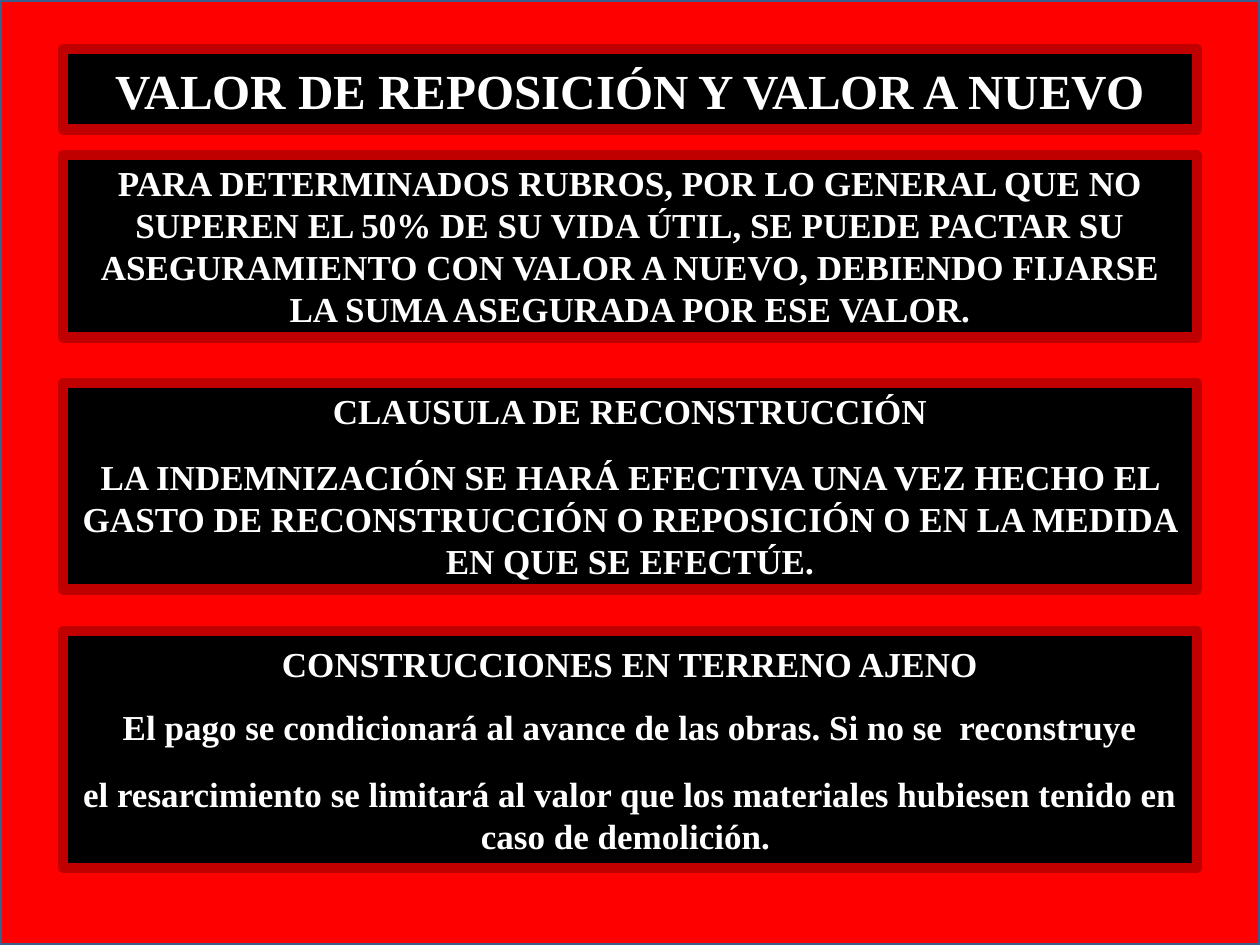
from dataclasses import dataclass

from pptx import Presentation
from pptx import util as u
from pptx.dml.color import RGBColor
from pptx.enum import shapes, text


@dataclass(frozen=True)
class Theme:
    """Colours, font and sizes shared by the whole slide."""
    backdrop: RGBColor = RGBColor(0xFF, 0x00, 0x00)
    edge: RGBColor = RGBColor(0x3A, 0x5F, 0x8C)
    panel: RGBColor = RGBColor(0x00, 0x00, 0x00)
    frame: RGBColor = RGBColor(0xC0, 0x00, 0x00)
    ink: RGBColor = RGBColor(0xFF, 0xFF, 0xFF)
    font: str = "Times New Roman"
    title_size: int = 28
    body_size: int = 20
    edge_width: int = 2
    frame_width: int = 6


THEME = Theme()
WIDTH, HEIGHT = u.Inches(10), u.Inches(7.5)
MARGIN = WIDTH * 0.05
TOP, MIDDLE = text.MSO_ANCHOR.TOP, text.MSO_ANCHOR.MIDDLE

TITLE = [("VALOR DE REPOSICIÓN Y VALOR A NUEVO", 0)]
NEW_VALUE = [
    ("PARA DETERMINADOS RUBROS, POR LO GENERAL QUE NO SUPEREN EL 50% DE SU VIDA ÚTIL, "
     "SE PUEDE PACTAR SU ASEGURAMIENTO CON VALOR A NUEVO, DEBIENDO FIJARSE LA SUMA "
     "ASEGURADA POR ESE VALOR.", 0),
]
RECONSTRUCTION = [
    ("CLAUSULA DE RECONSTRUCCIÓN", 0),
    ("LA INDEMNIZACIÓN SE HARÁ EFECTIVA UNA VEZ HECHO EL GASTO DE RECONSTRUCCIÓN O "
     "REPOSICIÓN O EN LA MEDIDA EN QUE SE EFECTÚE.", 14),
]
THIRD_PARTY_LAND = [
    ("CONSTRUCCIONES EN TERRENO AJENO", 0),
    ("El pago se condicionará al avance de las obras. Si no se  reconstruye", 12),
    ("el resarcimiento se limitará al valor que los materiales hubiesen tenido en "
     "caso de demolición. ", 14),
]


def add_block(slide, box, fill, line, line_width):
    """Place a flat outlined rectangle in the given box."""
    block = slide.shapes.add_shape(shapes.MSO_SHAPE.RECTANGLE, *(int(side) for side in box))
    block.shadow.inherit = False
    block.fill.solid()
    block.fill.fore_color.rgb = fill
    block.line.color.rgb = line
    block.line.width = u.Pt(line_width)
    return block


def add_backdrop(slide, box):
    """Cover the given box with the red background."""
    add_block(slide, box, THEME.backdrop, THEME.edge, THEME.edge_width)


def add_panel(slide, box, lines, size, anchor):
    """Place a framed black panel with centred bold paragraphs."""
    panel = add_block(slide, box, THEME.panel, THEME.frame, THEME.frame_width)
    body = panel.text_frame
    body.word_wrap = True
    body.vertical_anchor = anchor
    for index, (wording, gap) in enumerate(lines):
        paragraph = body.paragraphs[0] if index == 0 else body.add_paragraph()
        paragraph.alignment = text.PP_ALIGN.CENTER
        if gap:
            paragraph.space_before = u.Pt(gap)
        run = paragraph.add_run()
        run.text = wording
        run.font.name = THEME.font
        run.font.size = u.Pt(size)
        run.font.bold = True
        run.font.color.rgb = THEME.ink


def main():
    """Build and save the slide."""
    deck = Presentation()
    deck.slide_width, deck.slide_height = WIDTH, HEIGHT
    slide = deck.slides.add_slide(deck.slide_layouts[6])
    add_backdrop(slide, (0, 0, WIDTH, HEIGHT))
    panels = [
        (0.39, 0.64, TITLE, THEME.title_size, MIDDLE),
        (1.23, 1.45, NEW_VALUE, THEME.body_size, TOP),
        (3.04, 1.64, RECONSTRUCTION, THEME.body_size, TOP),
        (5.01, 1.88, THIRD_PARTY_LAND, THEME.body_size, MIDDLE),
    ]
    for top, height, lines, size, anchor in panels:
        box = (MARGIN, HEIGHT * top / 7.5, WIDTH - 2 * MARGIN, HEIGHT * height / 7.5)
        add_panel(slide, box, lines, size, anchor)
    deck.save("out.pptx")


if __name__ == "__main__":
    main()
